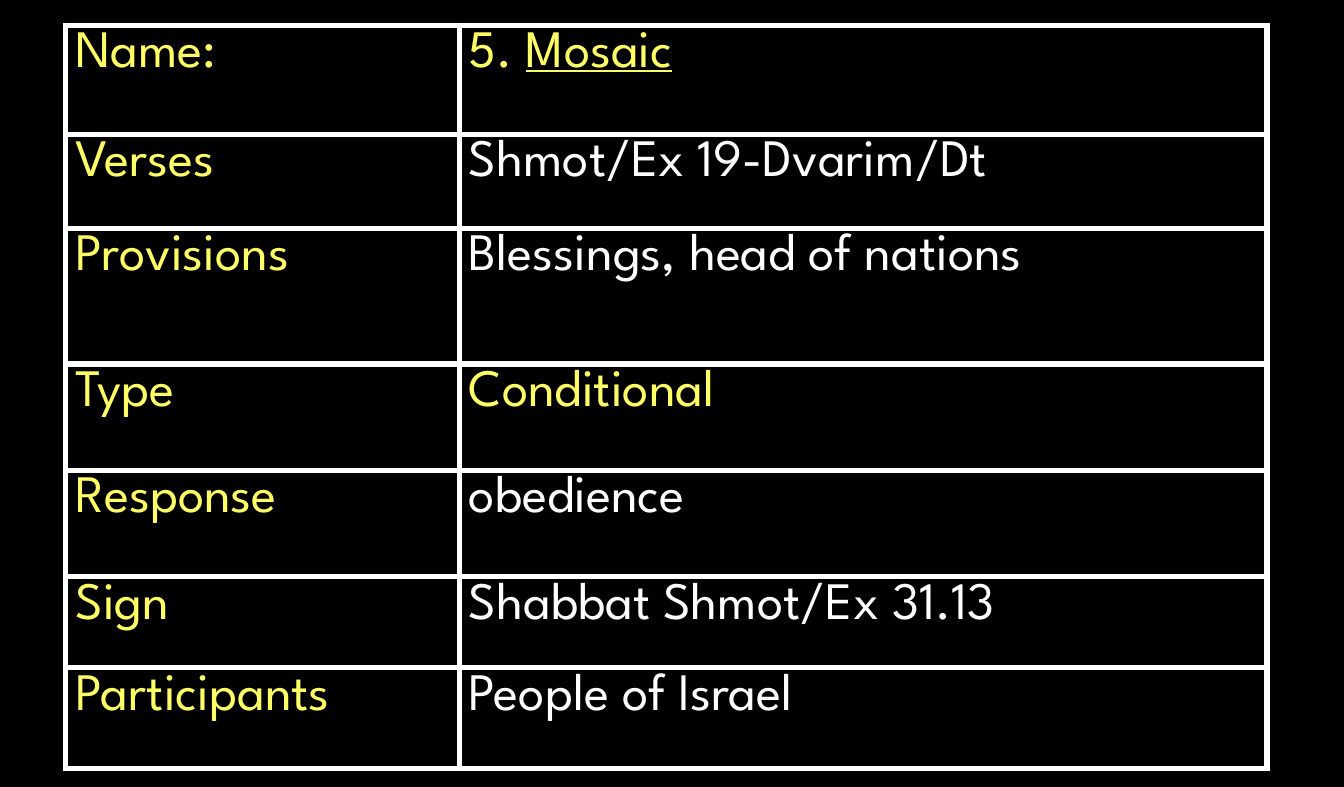
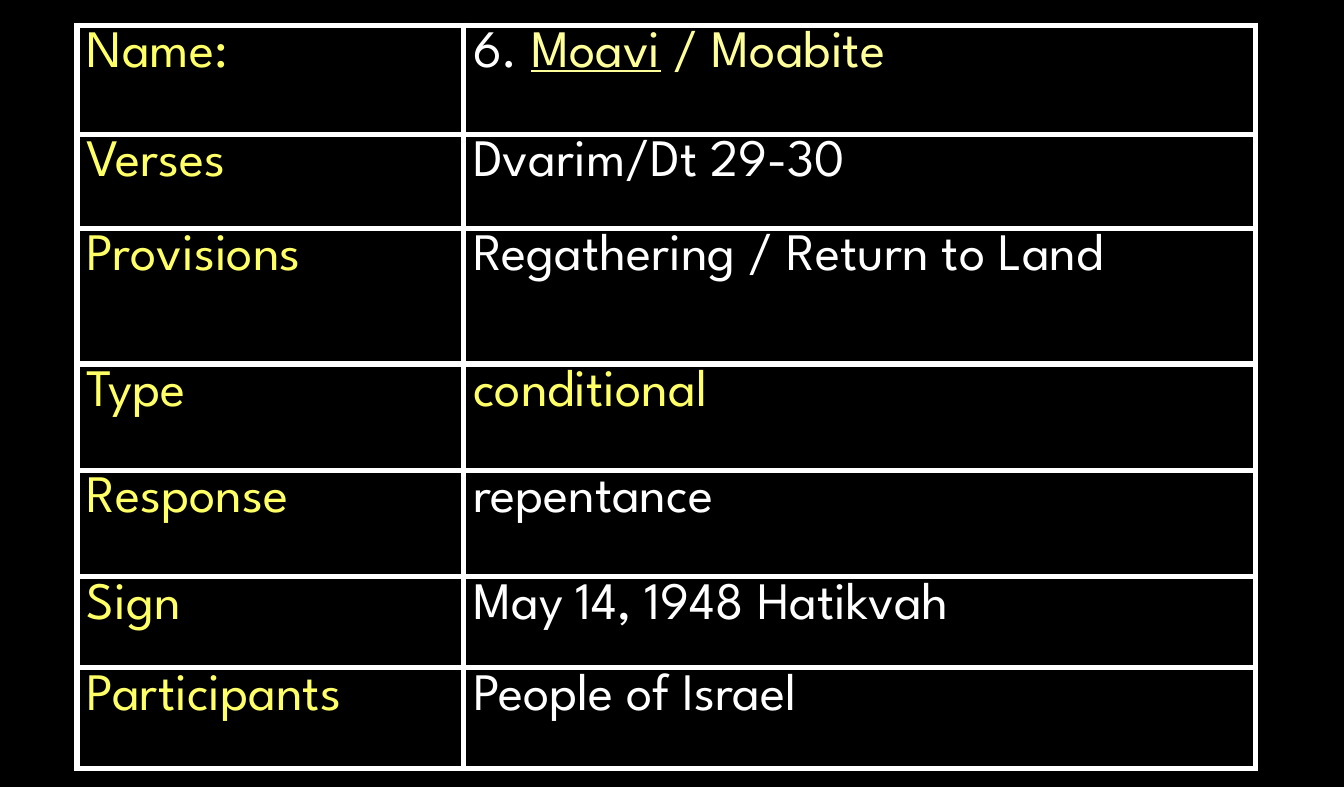
import pptx
import pptx.dml.color
import pptx.oxml
import pptx.oxml.ns
import pptx.util
from pptx.util import Inches

BLACK = pptx.dml.color.RGBColor(0x00, 0x00, 0x00)
WHITE = pptx.dml.color.RGBColor(0xFF, 0xFF, 0xFF)
YELLOW = pptx.dml.color.RGBColor(0xFF, 0xFF, 0x66)
PALE = pptx.dml.color.RGBColor(0xFF, 0xFF, 0x99)
FONT, SIZE = "League Spartan", pptx.util.Pt(27)

# Content: each value is a list of runs (text, colour, underlined)
LABELS = ["Name:", "Verses", "Provisions", "Type", "Response", "Sign", "Participants"]
COVENANTS = [
    {
        "left": 0.47, "cols": (2.81, 5.77),
        "values": [
            [("5. ", YELLOW, False), ("Mosaic", YELLOW, True)],
            [("Shmot/Ex 19-Dvarim/Dt", WHITE, False)],
            [("Blessings, head of nations", WHITE, False)],
            [("Conditional", YELLOW, False)],
            [("obedience", WHITE, False)],
            [("Shabbat Shmot/Ex 31.13", WHITE, False)],
            [("People of Israel", WHITE, False)],
        ],
    },
    {
        "left": 0.55, "cols": (2.76, 5.66),
        "values": [
            [("6. ", WHITE, False), ("Moavi", PALE, True), (" / Moabite", PALE, False)],
            [("Dvarim/Dt 29-30", WHITE, False)],
            [("Regathering / Return to Land", WHITE, False)],
            [("conditional", YELLOW, False)],
            [("repentance", WHITE, False)],
            [("May 14, 1948 Hatikvah", WHITE, False)],
            [("People of Israel", WHITE, False)],
        ],
    },
]

# Shared table geometry
TOP = 0.18
ROWS = (0.78, 0.67, 0.97, 0.76, 0.76, 0.65, 0.72)
BORDER = pptx.util.Pt(3)


def add_borders(cell):
    tcPr = cell._tc.get_or_add_tcPr()
    for side in ("lnL", "lnR", "lnT", "lnB"):
        tcPr.append(pptx.oxml.parse_xml(
            f'<a:{side} {pptx.oxml.ns.nsdecls("a")} w="{BORDER}">'
            f'<a:solidFill><a:srgbClr val="{WHITE}"/></a:solidFill></a:{side}>'))


def fill_cell(cell, runs):
    cell.margin_left = cell.margin_right = Inches(0.07)
    cell.margin_top = cell.margin_bottom = Inches(0.04)
    add_borders(cell)
    cell.fill.background()
    p = cell.text_frame.paragraphs[0]
    for text, color, underlined in runs:
        r = p.add_run()
        r.text = text
        r.font.name, r.font.size = FONT, SIZE
        r.font.color.rgb = color
        r.font.underline = underlined


def add_covenant(prs, covenant):
    s = prs.slides.add_slide(prs.slide_layouts[6])
    cols = covenant["cols"]
    table = s.shapes.add_table(
        len(ROWS), len(cols), Inches(covenant["left"]), Inches(TOP),
        Inches(sum(cols)), Inches(sum(ROWS))).table
    table.first_row = table.horz_banding = False
    for column, width in zip(table.columns, cols):
        column.width = Inches(width)
    for i, (label, value) in enumerate(zip(LABELS, covenant["values"])):
        table.rows[i].height = Inches(ROWS[i])
        fill_cell(table.cell(i, 0), [(label, YELLOW, False)])
        fill_cell(table.cell(i, 1), value)


def main():
    prs = pptx.Presentation()
    prs.slide_width, prs.slide_height = Inches(9.6), Inches(5.62)
    # Black background for every slide
    background = prs.slide_master.background.fill
    background.solid()
    background.fore_color.rgb = BLACK
    for covenant in COVENANTS:
        add_covenant(prs, covenant)
    prs.save("out.pptx")


if __name__ == "__main__":
    main()
